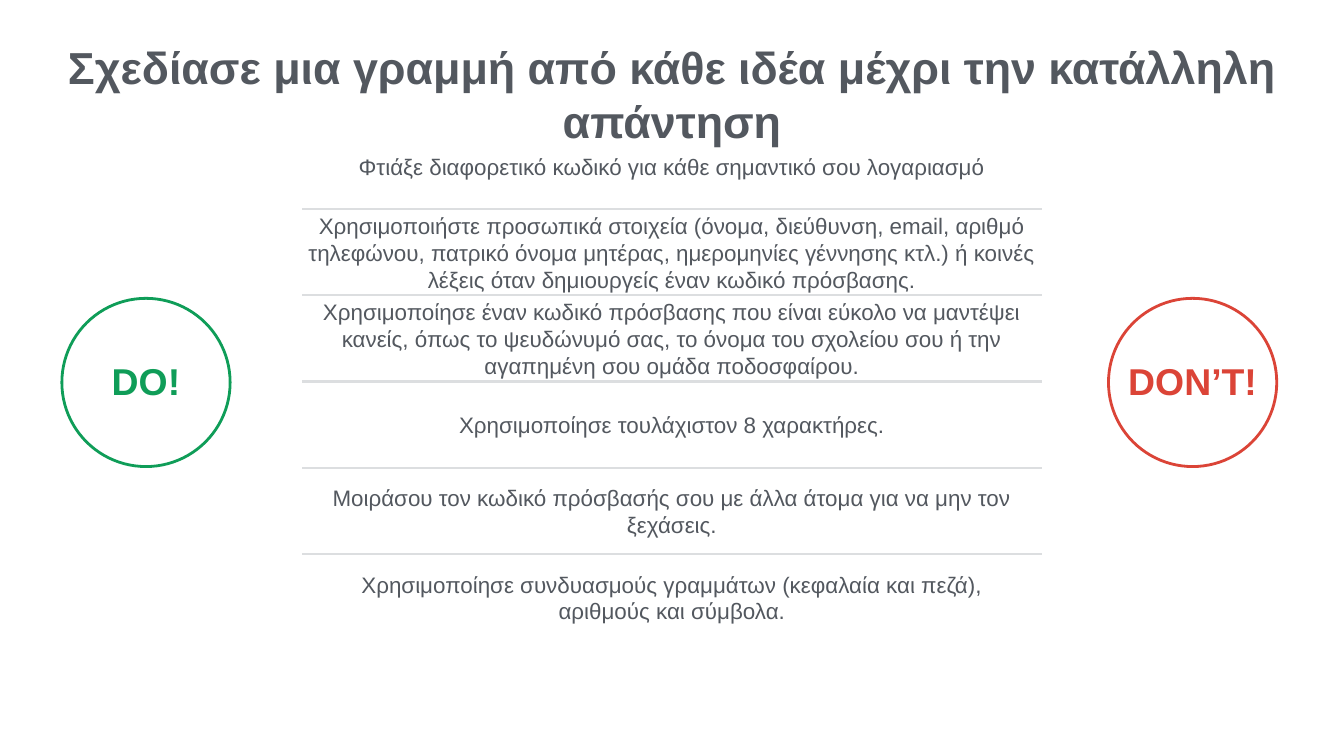
import dataclasses

import lxml.etree
import pptx
import pptx.dml.color
import pptx.enum.shapes
import pptx.enum.text
import pptx.oxml.ns
import pptx.shapes.shapetree
import pptx.util
from pptx.util import Cm

COLORS = {
    "white": "FFFFFF",
    "text": "53585F",
    "divider": "DCDEE0",
    "do": "0F9D58",
    "dont": "DB4437",
}
FONT = "Arial"
SLIDE_WIDTH, SLIDE_HEIGHT = 25.4, 14.29

# Layout in centimetres
INSET = 0.25
CIRCLE_TOP, CIRCLE_SIZE = 5.64, 3.18
LABEL_TOP, LABEL_WIDTH, LABEL_HEIGHT = 6.53, 3.6, 1.37
IDEA_TOP, IDEA_WIDTH, IDEA_HEIGHT, IDEA_PITCH = 2.46, 13.97, 1.37, 1.63
WIDE_IDEA_WIDTH = 14.68
DIVIDER_TOP = 3.95


@dataclasses.dataclass
class Answer:
    label: str
    color: str
    center: float


@dataclasses.dataclass
class Idea:
    text: str
    width: float = IDEA_WIDTH


ANSWERS = [Answer("DO!", "do", 2.76), Answer("DON’T!", "dont", 22.54)]
IDEAS = [
    Idea("Φτιάξε διαφορετικό κωδικό για κάθε σημαντικό σου λογαριασμό"),
    Idea(
        "Χρησιμοποιήστε προσωπικά στοιχεία (όνομα, διεύθυνση, email, αριθμό "
        "τηλεφώνου, πατρικό όνομα μητέρας, ημερομηνίες γέννησης κτλ.) ή κοινές "
        "λέξεις όταν δημιουργείς έναν κωδικό πρόσβασης.",
        WIDE_IDEA_WIDTH,
    ),
    Idea(
        "Χρησιμοποίησε έναν κωδικό πρόσβασης που είναι εύκολο να μαντέψει "
        "κανείς, όπως το ψευδώνυμό σας, το όνομα του σχολείου σου ή την "
        "αγαπημένη σου ομάδα ποδοσφαίρου."
    ),
    Idea("Χρησιμοποίησε τουλάχιστον 8 χαρακτήρες."),
    Idea("Μοιράσου τον κωδικό πρόσβασής σου με άλλα άτομα για να μην τον ξεχάσεις."),
    Idea(
        "Χρησιμοποίησε συνδυασμούς γραμμάτων (κεφαλαία και πεζά), "
        "αριθμούς και σύμβολα."
    ),
]

Shapes = pptx.shapes.shapetree._BaseGroupShapes


def rgb(name: str) -> pptx.dml.color.RGBColor:
    return pptx.dml.color.RGBColor.from_string(COLORS[name])


def add_text(shapes: Shapes, text: str, *, center: float, top: float, width: float,
             height: float, size: float, color: str = "text", bold: bool = False,
             middle: bool = False) -> None:
    """Add a centred text box around a vertical axis."""
    box = shapes.add_textbox(Cm(center - width / 2), Cm(top), Cm(width), Cm(height))
    frame = box.text_frame
    frame.word_wrap = True
    frame.margin_left = frame.margin_right = Cm(INSET)
    frame.margin_top = frame.margin_bottom = Cm(INSET)
    anchors = pptx.enum.text.MSO_ANCHOR
    frame.vertical_anchor = anchors.MIDDLE if middle else anchors.TOP
    paragraph = frame.paragraphs[0]
    paragraph.alignment = pptx.enum.text.PP_ALIGN.CENTER
    run = paragraph.add_run()
    run.text = text
    run.font.name = FONT
    run.font.size = pptx.util.Pt(size)
    run.font.bold = bold
    run.font.color.rgb = rgb(color)


def add_answer(shapes: Shapes, answer: Answer) -> None:
    circle = shapes.add_shape(
        pptx.enum.shapes.MSO_SHAPE.OVAL,
        Cm(answer.center - CIRCLE_SIZE / 2), Cm(CIRCLE_TOP),
        Cm(CIRCLE_SIZE), Cm(CIRCLE_SIZE),
    )
    circle.shadow.inherit = False
    circle.fill.solid()
    circle.fill.fore_color.rgb = rgb("white")
    circle.line.color.rgb = rgb(answer.color)
    circle.line.width = pptx.util.Pt(1.5)
    add_text(shapes, answer.label, center=answer.center, top=LABEL_TOP,
             width=LABEL_WIDTH, height=LABEL_HEIGHT, size=20,
             color=answer.color, bold=True)


def add_divider(shapes: Shapes, top: float) -> None:
    left = (SLIDE_WIDTH - IDEA_WIDTH) / 2
    line = shapes.add_connector(
        pptx.enum.shapes.MSO_CONNECTOR.STRAIGHT,
        Cm(left), Cm(top), Cm(left + IDEA_WIDTH), Cm(top),
    )
    line.line.color.rgb = rgb("divider")
    line.line.width = pptx.util.Pt(1.25)
    properties = line._element.spPr
    lxml.etree.SubElement(properties, pptx.oxml.ns.qn("a:effectLst"))


def main() -> None:
    presentation = pptx.Presentation()
    presentation.slide_width = Cm(SLIDE_WIDTH)
    presentation.slide_height = Cm(SLIDE_HEIGHT)
    slide = presentation.slides.add_slide(presentation.slide_layouts[6])
    middle = SLIDE_WIDTH / 2

    # Answer circles
    for answer in ANSWERS:
        add_answer(slide.shapes.add_group_shape().shapes, answer)

    # Ideas with dividers between them
    idea_shapes = slide.shapes.add_group_shape().shapes
    for row, idea in enumerate(IDEAS):
        add_text(idea_shapes, idea.text, center=middle,
                 top=IDEA_TOP + row * IDEA_PITCH, width=idea.width,
                 height=IDEA_HEIGHT, size=12, middle=True)
    for row in range(len(IDEAS) - 1):
        add_divider(idea_shapes, DIVIDER_TOP + row * IDEA_PITCH)

    # Title
    add_text(slide.shapes,
             "Σχεδίασε μια γραμμή από κάθε ιδέα μέχρι την κατάλληλη απάντηση",
             center=middle, top=0.51, width=23.5, height=2.24, size=24, bold=True)

    presentation.save("out.pptx")


if __name__ == "__main__":
    main()
